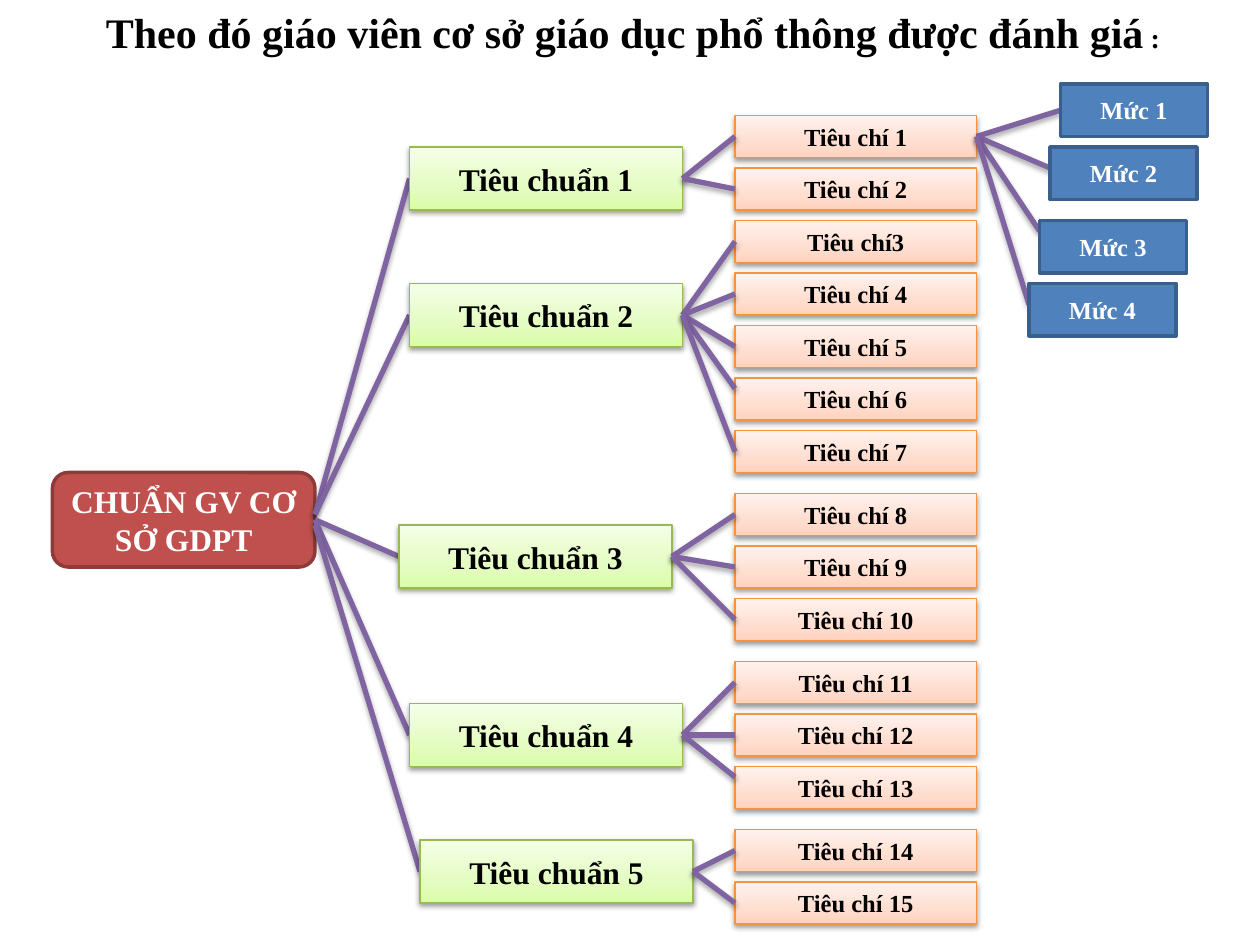
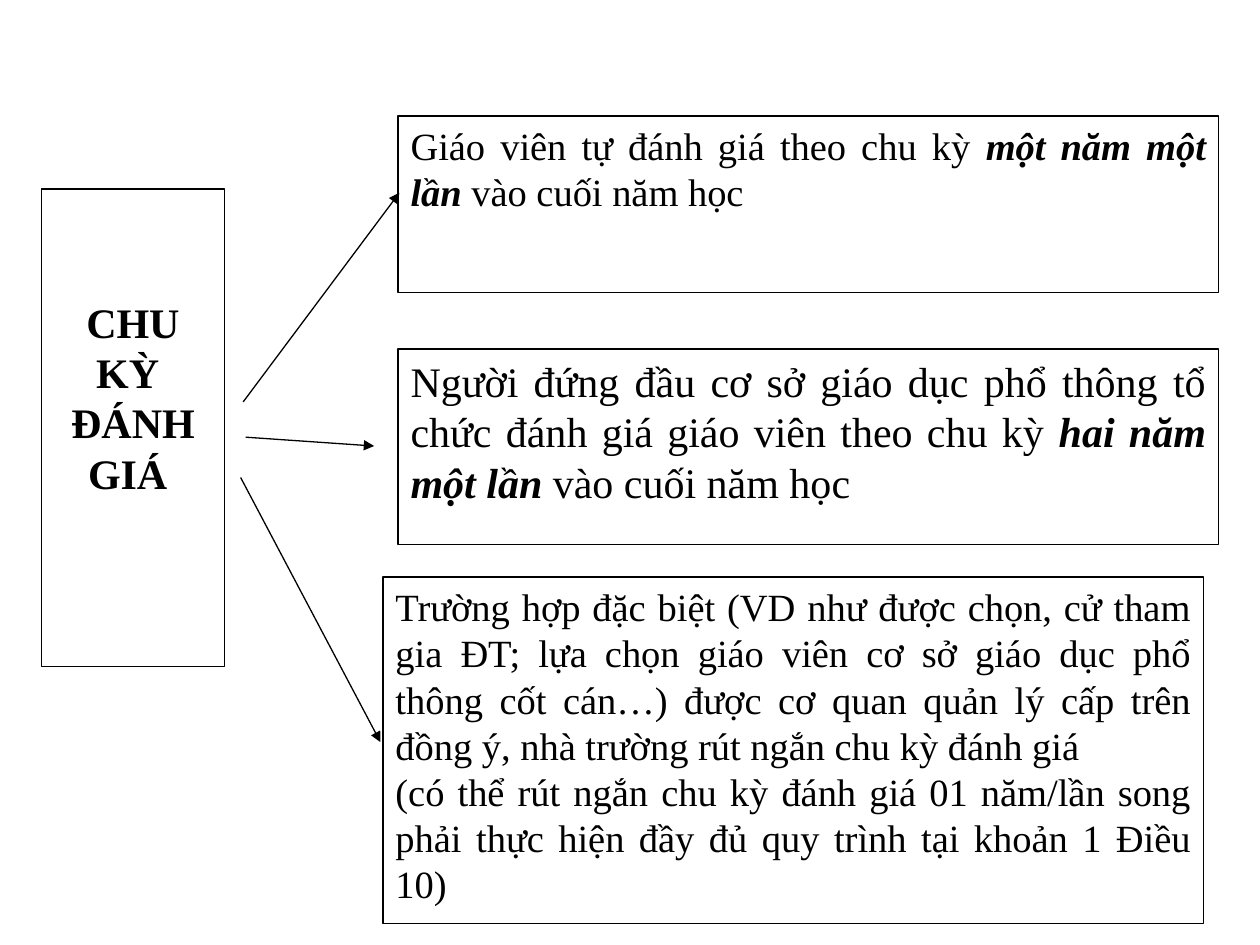
from copy import deepcopy
from dataclasses import dataclass
from typing import NamedTuple, Optional

from lxml.etree import SubElement
from pptx import Presentation
from pptx.dml.color import RGBColor
from pptx.enum.shapes import MSO_CONNECTOR, MSO_SHAPE
from pptx.enum.text import MSO_ANCHOR, MSO_AUTO_SIZE, PP_ALIGN
from pptx.oxml.ns import qn
from pptx.util import Inches, Pt

# Shared look
FONT = "Times New Roman"
BLACK = RGBColor(0x00, 0x00, 0x00)
WHITE = RGBColor(0xFF, 0xFF, 0xFF)
RED = RGBColor(0xC0, 0x50, 0x4D)
DARK_RED = RGBColor(0x8E, 0x3B, 0x39)
BLUE = RGBColor(0x4F, 0x81, 0xBD)
DARK_BLUE = RGBColor(0x3A, 0x5F, 0x8C)
PURPLE = RGBColor(0x80, 0x64, 0xA2)
GREEN = RGBColor(0x98, 0xB9, 0x55)
ORANGE = RGBColor(0xF6, 0x92, 0x40)
GREEN_FADE = (RGBColor(0xDA, 0xFD, 0xA7), RGBColor(0xE4, 0xFC, 0xC2), RGBColor(0xF5, 0xFF, 0xE7))
ORANGE_FADE = (RGBColor(0xFF, 0xD2, 0xBD), RGBColor(0xFF, 0xDE, 0xD0), RGBColor(0xFF, 0xF2, 0xED))
FADE_POSITIONS = (0, 0.35, 1)


class Shadow(NamedTuple):
    opacity: int
    distance: float


BOX_SHADOW = Shadow(38, 1.6)
LINK_SHADOW = Shadow(35, 1.8)


@dataclass(frozen=True)
class BoxStyle:
    fill: tuple[RGBColor, ...]  # one colour is solid, three fade upwards
    line: RGBColor
    line_width: float
    font_size: int = 14
    font_color: RGBColor = BLACK
    bold: bool = True
    shadow: Optional[Shadow] = None
    outline: MSO_SHAPE = MSO_SHAPE.RECTANGLE
    align: PP_ALIGN = PP_ALIGN.CENTER
    anchor: MSO_ANCHOR = MSO_ANCHOR.MIDDLE


class Box(NamedTuple):
    left: float
    top: float
    width: float
    height: float


class TextRun(NamedTuple):
    text: str
    emphasis: bool = False


class Level(NamedTuple):
    left: int
    top: int
    link_y: float


class Standard(NamedTuple):
    left: int
    top: int
    root_y: float
    gap_before: int
    criteria: int


class Rule(NamedTuple):
    box: Box
    font_size: int
    paragraphs: list[list[TextRun]]


ROOT = BoxStyle((RED,), DARK_RED, 2, 18, WHITE, outline=MSO_SHAPE.ROUNDED_RECTANGLE)
STANDARD = BoxStyle(GREEN_FADE, GREEN, 0.75, 18, shadow=BOX_SHADOW)
CRITERION = BoxStyle(ORANGE_FADE, ORANGE, 0.75, shadow=BOX_SHADOW)
LEVEL = BoxStyle((BLUE,), DARK_BLUE, 2, font_color=WHITE)
CYCLE = BoxStyle((WHITE,), BLACK, 0.75, 24, anchor=MSO_ANCHOR.TOP)

# Tree geometry, in twelfths of an inch
ROOT_BOX = Box(5, 45, 25, 9)
STANDARD_SIZE = (26, 6)
CRITERION_SIZE = (23, 4)
LEVEL_SIZE = (14, 5)
CRITERION_LEFT, FIRST_CRITERION_TOP, CRITERION_PITCH = 70, 11, 5
STANDARDS = [
    Standard(39, 14, 49, 0, 2),
    Standard(39, 27, 49, 0, 5),
    Standard(38, 50, 49.5, 1, 3),
    Standard(39, 67, 49.5, 1, 3),
    Standard(40, 80, 50, 1, 2),
]
LEVELS = [Level(101, 8, 10.5), Level(100, 14, 16), Level(99, 21, 22), Level(98, 27, 29)]
RAISED_LINKS = {6, 13}  # criteria whose link ends one unit above the middle
CRITERION_LABELS = {3: "Tiêu chí3"}

# Evaluation cycle content
RULES = [
    Rule(Box(3.16, 0.92, 6.51, 1.4), 22, [[
        TextRun("Giáo viên tự đánh giá theo chu kỳ "),
        TextRun("một năm một lần", True),
        TextRun(" vào cuối năm học "),
    ]]),
    Rule(Box(3.16, 2.77, 6.51, 1.55), 24, [[
        TextRun("Người đứng đầu cơ sở giáo dục phổ thông tổ chức đánh giá giáo viên theo chu kỳ "),
        TextRun("hai năm một lần", True),
        TextRun(" vào cuối năm học"),
    ]]),
    Rule(Box(3.04, 4.58, 6.51, 2.75), 22, [
        [TextRun("Trường hợp đặc biệt (VD như được chọn, cử tham gia ĐT; lựa chọn giáo viên "
                 "cơ sở giáo dục phổ thông cốt cán…) được cơ quan quản lý cấp trên đồng ý, "
                 "nhà trường rút ngắn chu kỳ đánh giá ")],
        [TextRun("(có thể rút ngắn chu kỳ đánh giá 01 năm/lần song phải thực hiện đầy đủ "
                 "quy trình tại khoản 1 Điều 10)")],
    ]),
]
ARROWS = [
    ((1.93, 3.19), (3.17, 1.53)),
    ((1.95, 3.47), (2.97, 3.54)),
    ((1.91, 3.79), (3.02, 5.89)),
]


def twelfths(box: Box) -> Box:
    return Box(*(side / 12 for side in box))


def add_run(paragraph, text: str, size: int, color: RGBColor, bold: bool, italic: bool = False) -> None:
    run = paragraph.add_run()
    run.text = text
    run.font.name = FONT
    run.font.size = Pt(size)
    run.font.bold = bold
    run.font.italic = italic
    run.font.color.rgb = color


def add_shadow(effects, shadow: Shadow) -> None:
    outer = SubElement(effects, qn("a:outerShdw"), blurRad=str(Pt(3.1)), dist=str(Pt(shadow.distance)),
                       dir="5400000", rotWithShape="0")
    color = SubElement(outer, qn("a:srgbClr"), val=str(BLACK))
    SubElement(color, qn("a:alpha"), val=str(shadow.opacity * 1000))


def paint(shape, colors: tuple[RGBColor, ...]) -> None:
    if len(colors) == 1:
        shape.fill.solid()
        shape.fill.fore_color.rgb = colors[0]
        return
    shape.fill.gradient()
    shape.fill.gradient_angle = 90
    stops = next(shape._element.iter(qn("a:gsLst")))
    stops.append(deepcopy(stops[0]))
    for stop, position, color in zip(shape.fill.gradient_stops, FADE_POSITIONS, colors):
        stop.position = position
        stop.color.rgb = color


def add_box(slide, box: Box, style: BoxStyle, paragraphs: list[list[TextRun]]):
    shape = slide.shapes.add_shape(style.outline, *(Inches(side) for side in box))
    paint(shape, style.fill)
    shape.line.color.rgb = style.line
    shape.line.width = Pt(style.line_width)
    shape.shadow.inherit = False
    if style.shadow:
        add_shadow(shape._element.spPr.find(qn("a:effectLst")), style.shadow)
    frame = shape.text_frame
    frame.word_wrap = True
    frame.vertical_anchor = style.anchor
    for index, runs in enumerate(paragraphs):
        paragraph = frame.add_paragraph() if index else frame.paragraphs[0]
        paragraph.alignment = style.align
        for run in runs:
            add_run(paragraph, run.text, style.font_size, style.font_color,
                    style.bold or run.emphasis, run.emphasis)
    return shape


def add_line(slide, start: tuple[float, float], end: tuple[float, float], color: RGBColor,
             width: float, shadow: Optional[Shadow] = None, arrow: bool = False) -> None:
    line = slide.shapes.add_connector(MSO_CONNECTOR.STRAIGHT, *(Inches(value) for value in start + end))
    line.line.color.rgb = color
    line.line.width = Pt(width)
    properties = line._element.spPr
    if arrow:
        SubElement(properties.find(qn("a:ln")), qn("a:tailEnd"), type="triangle")
    effects = SubElement(properties, qn("a:effectLst"))
    if shadow:
        add_shadow(effects, shadow)


def add_tree_box(slide, box: Box, style: BoxStyle, label: str) -> None:
    add_box(slide, twelfths(box), style, [[TextRun(label)]])


def add_link(slide, x1: float, y1: float, x2: float, y2: float) -> None:
    add_line(slide, (x1 / 12, y1 / 12), (x2 / 12, y2 / 12), PURPLE, 3, LINK_SHADOW)


def set_title(slide) -> None:
    title = slide.shapes.title
    title.left, title.top, title.width, title.height = Inches(0.25), Inches(0), Inches(9.75), Inches(0.5)
    frame = title.text_frame
    frame.word_wrap = True
    frame.auto_size = MSO_AUTO_SIZE.SHAPE_TO_FIT_TEXT
    frame.vertical_anchor = MSO_ANCHOR.TOP
    heading = frame.paragraphs[0]
    heading.alignment = PP_ALIGN.LEFT
    heading.space_after = Pt(8)
    heading._p.get_or_add_pPr().set("indent", str(Inches(0.49)))
    add_run(heading, "Theo đó giáo viên cơ sở giáo dục phổ thông được đánh giá", 24, BLACK, True)
    add_run(heading, "\N{NO-BREAK SPACE}:", 16, BLACK, True)


def build_standards_slide(presentation) -> None:
    slide = presentation.slides.add_slide(presentation.slide_layouts[5])
    set_title(slide)
    add_tree_box(slide, ROOT_BOX, ROOT, "CHUẨN GV CƠ SỞ GDPT")

    # Standards, each with its criteria
    root_right = ROOT_BOX.left + ROOT_BOX.width
    criterion_top = FIRST_CRITERION_TOP
    number = 0
    for index, standard in enumerate(STANDARDS, start=1):
        middle = standard.top + STANDARD_SIZE[1] / 2
        add_link(slide, root_right, standard.root_y, standard.left, middle)
        add_tree_box(slide, Box(standard.left, standard.top, *STANDARD_SIZE), STANDARD, f"Tiêu chuẩn {index}")
        criterion_top += standard.gap_before
        for _ in range(standard.criteria):
            number += 1
            link_y = criterion_top + CRITERION_SIZE[1] / 2 - (number in RAISED_LINKS)
            add_tree_box(slide, Box(CRITERION_LEFT, criterion_top, *CRITERION_SIZE), CRITERION,
                         CRITERION_LABELS.get(number, f"Tiêu chí {number}"))
            add_link(slide, standard.left + STANDARD_SIZE[0], middle, CRITERION_LEFT, link_y)
            criterion_top += CRITERION_PITCH

    # Levels of the first criterion
    for level in LEVELS:
        add_link(slide, CRITERION_LEFT + CRITERION_SIZE[0], FIRST_CRITERION_TOP + CRITERION_SIZE[1] / 2,
                 level.left, level.link_y)
    for index, level in enumerate(LEVELS, start=1):
        add_tree_box(slide, Box(level.left, level.top, *LEVEL_SIZE), LEVEL, f"Mức {index}")


def build_cycle_slide(presentation) -> None:
    slide = presentation.slides.add_slide(presentation.slide_layouts[6])
    cycle = add_box(slide, Box(0.33, 1.5, 1.45, 3.79), CYCLE, [[TextRun("CHU KỲ ")], [TextRun("ĐÁNH GIÁ ")]])
    cycle.text_frame.margin_top = Inches(0.85)
    for rule in RULES:
        style = BoxStyle((WHITE,), BLACK, 0.75, rule.font_size, bold=False,
                         align=PP_ALIGN.JUSTIFY, anchor=MSO_ANCHOR.TOP)
        add_box(slide, rule.box, style, rule.paragraphs)
    for start, end in ARROWS:
        add_line(slide, start, end, BLACK, 0.75, arrow=True)


def main() -> None:
    presentation = Presentation()
    presentation.slide_width = Inches(10)
    presentation.slide_height = Inches(7.5)
    build_standards_slide(presentation)
    build_cycle_slide(presentation)
    presentation.save("out.pptx")


if __name__ == "__main__":
    main()
